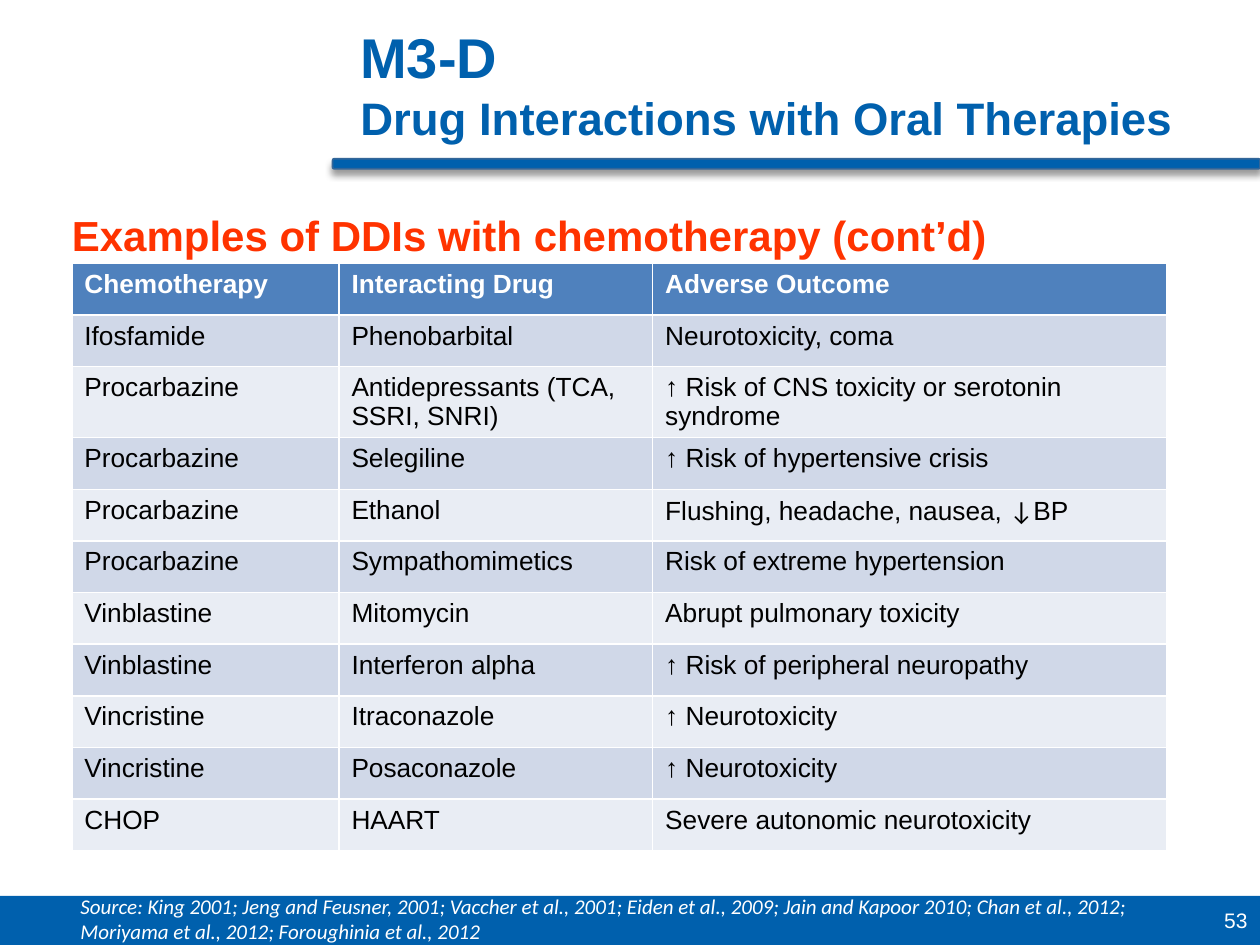
from dataclasses import dataclass
from lxml.etree import SubElement as Sub
from pptx import Presentation
from pptx.dml.color import RGBColor as Rgb
from pptx.enum.shapes import MSO_SHAPE as Kind
from pptx.enum.text import MSO_ANCHOR as Anchor, MSO_AUTO_SIZE as Auto, PP_ALIGN as Align
from pptx.oxml.ns import qn
from pptx.util import Inches, Pt

TITLE = ["M3-D", "Drug Interactions with Oral Therapies"]
HEAD = "Examples of DDIs with chemotherapy (cont’d)"
ROWS = [
    ("Chemotherapy", "Interacting Drug", "Adverse Outcome"),
    ("Ifosfamide", "Phenobarbital", "Neurotoxicity, coma"),
    ("Procarbazine", "Antidepressants (TCA, SSRI, SNRI)",
     "↑ Risk of CNS toxicity or serotonin syndrome"),
    ("Procarbazine", "Selegiline", "↑ Risk of hypertensive crisis"),
    ("Procarbazine", "Ethanol", "Flushing, headache, nausea, ↓BP"),
    ("Procarbazine", "Sympathomimetics", "Risk of extreme hypertension"),
    ("Vinblastine", "Mitomycin", "Abrupt pulmonary toxicity"),
    ("Vinblastine", "Interferon alpha", "↑ Risk of peripheral neuropathy"),
    ("Vincristine", "Itraconazole", "↑ Neurotoxicity"),
    ("Vincristine", "Posaconazole", "↑ Neurotoxicity"),
    ("CHOP", "HAART", "Severe autonomic neurotoxicity"),
]
SOURCE = ("Source: King 2001; Jeng and Feusner, 2001; Vaccher et al., 2001; "
          "Eiden et al., 2009; Jain and Kapoor 2010; Chan et al., 2012; "
          "Moriyama et al., 2012; Foroughinia et al., 2012")
PAGE = "53"
WIDE, HIGH = 10, 7.5
COLS = (2.12, 2.49, 4.08)
ROW = 0.41
FOOT = 0.39


@dataclass(frozen=True)
class Theme:
    blue: str = "0060AD"
    edge: str = "336699"
    red: str = "FF3300"
    white: str = "FFFFFF"
    black: str = "000000"
    top: str = "4F81BD"
    bands: tuple = ("E9EDF4", "D0D8E8")
    sans: str = "Arial"
    alt: str = "Calibri"
    big: int = 32
    sub: int = 26
    head: int = 24
    cell: int = 15
    note: int = 12


T = Theme()


def style(run, size, color, bold=False, italic=False, face=T.sans):
    font = run.font
    font.size, font.bold, font.italic, font.name = Pt(size), bold, italic, face
    font.color.rgb = Rgb.from_string(color)


def place(shape, *box):
    shape.left, shape.top, shape.width, shape.height = map(Inches, box)


def frame(shape, text, align=Align.LEFT, anchor=Anchor.MIDDLE):
    body = shape.text_frame
    body.text = text
    body.word_wrap, body.auto_size = True, Auto.NONE
    body.vertical_anchor = anchor
    para = body.paragraphs[0]
    para.alignment, para.space_before = align, Pt(0)
    return para


def bar(shapes, kind, *box):
    shape = shapes.add_shape(kind, *map(Inches, box))
    shape.shadow.inherit = False
    shape.fill.solid()
    shape.fill.fore_color.rgb = Rgb.from_string(T.blue)
    shape.line.fill.background()
    return shape


def shade(shape):
    effect = shape._element.spPr.find(qn("a:effectLst"))
    drop = Sub(effect, qn("a:outerShdw"), blurRad=str(Pt(4)), dist=str(Pt(3)),
               dir="5400000", rotWithShape="0")
    tint = Sub(drop, qn("a:srgbClr"), val=T.black)
    Sub(tint, qn("a:alpha"), val="40000")


def grid(shapes):
    size = sum(COLS), ROW * len(ROWS)
    table = shapes.add_table(len(ROWS), len(COLS), *map(Inches, (0.57, 2.09, *size))).table
    for col, width in zip(table.columns, COLS):
        col.width = Inches(width)
    for i, (line, row) in enumerate(zip(ROWS, table.rows)):
        row.height = Inches(ROW)
        first = i == 0
        for text, cell in zip(line, row.cells):
            cell.fill.solid()
            cell.fill.fore_color.rgb = Rgb.from_string(T.top if first else T.bands[i % 2])
            para = cell.text_frame.paragraphs[0]
            for part in filter(None, text.partition("↓")):
                run = para.add_run()
                run.text = part
                style(run, T.cell, T.white if first else T.black, bold=first,
                      face=T.alt if part == "↓" else T.sans)


def main():
    deck = Presentation()
    deck.slide_width, deck.slide_height = Inches(WIDE), Inches(HIGH)
    slide = deck.slides.add_slide(deck.slide_layouts[1])
    shapes = slide.shapes
    title, body = slide.placeholders

    bar(shapes, Kind.RECTANGLE, 0, HIGH - FOOT, WIDE, FOOT)
    rule = bar(shapes, Kind.ROUNDED_RECTANGLE, 2.64, 1.26, WIDE - 2.64, 0.08)
    rule.line.color.rgb = Rgb.from_string(T.edge)
    rule.line.width = Pt(1)
    shade(rule)

    place(title, 2.76, 0.17, WIDE - 2.76, 0.99)
    para = frame(title, "\v".join(TITLE))
    for run, size in zip(para.runs, (T.big, T.sub)):
        style(run, size, T.blue, bold=True)

    place(body, 0.47, 1.56, 8.76, 0.6)
    para = frame(body, HEAD)
    props = para._p.get_or_add_pPr()
    props.set("marL", "0")
    props.set("indent", "0")
    Sub(props, qn("a:buNone"))
    style(para.runs[0], T.head, T.red, bold=True)

    grid(shapes)

    page = shapes.add_textbox(*map(Inches, (7.67, HIGH - FOOT, WIDE - 7.67, FOOT)))
    para = frame(page, PAGE, align=Align.RIGHT)
    style(para.runs[0], T.note, T.white)

    note = shapes.add_textbox(*map(Inches, (0.54, 7.04, 9.02, 0.5)))
    para = frame(note, SOURCE, anchor=Anchor.TOP)
    style(para.runs[0], T.note, T.white, italic=True, face=T.alt)

    deck.save("out.pptx")


if __name__ == "__main__":
    main()
